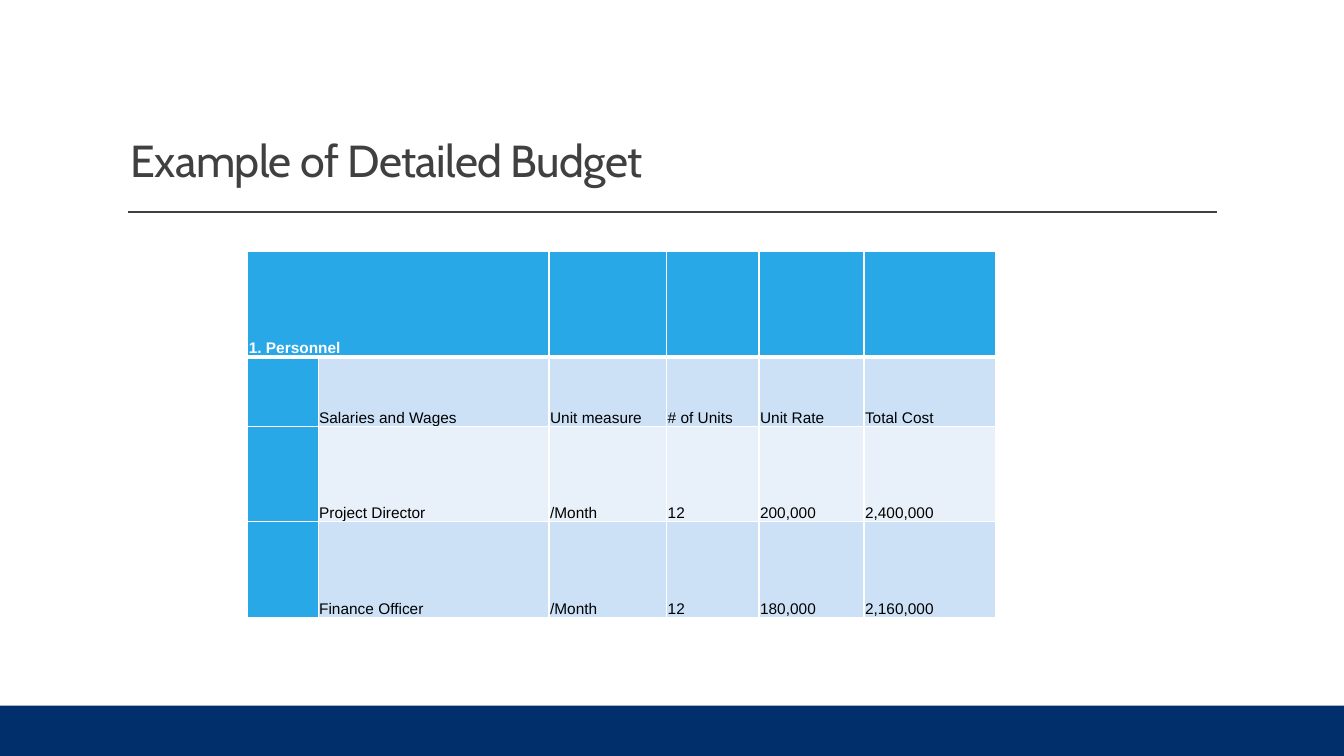
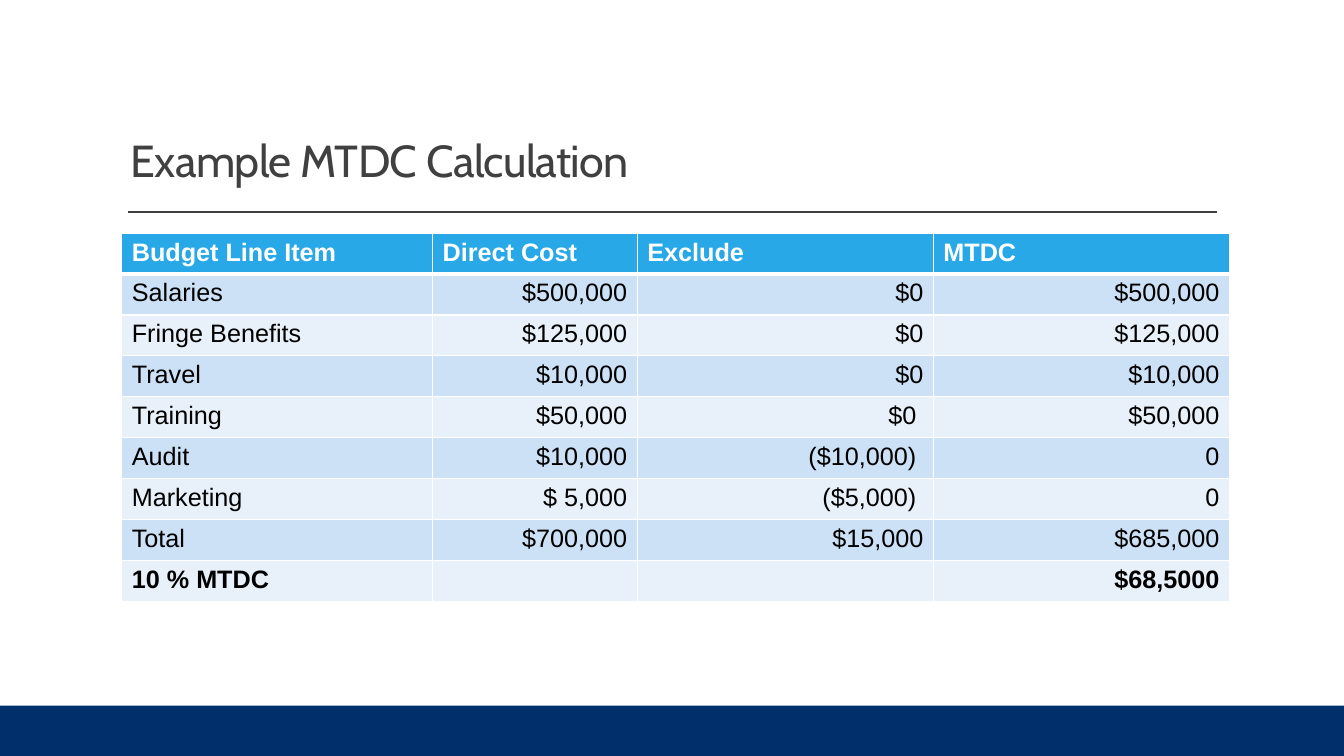
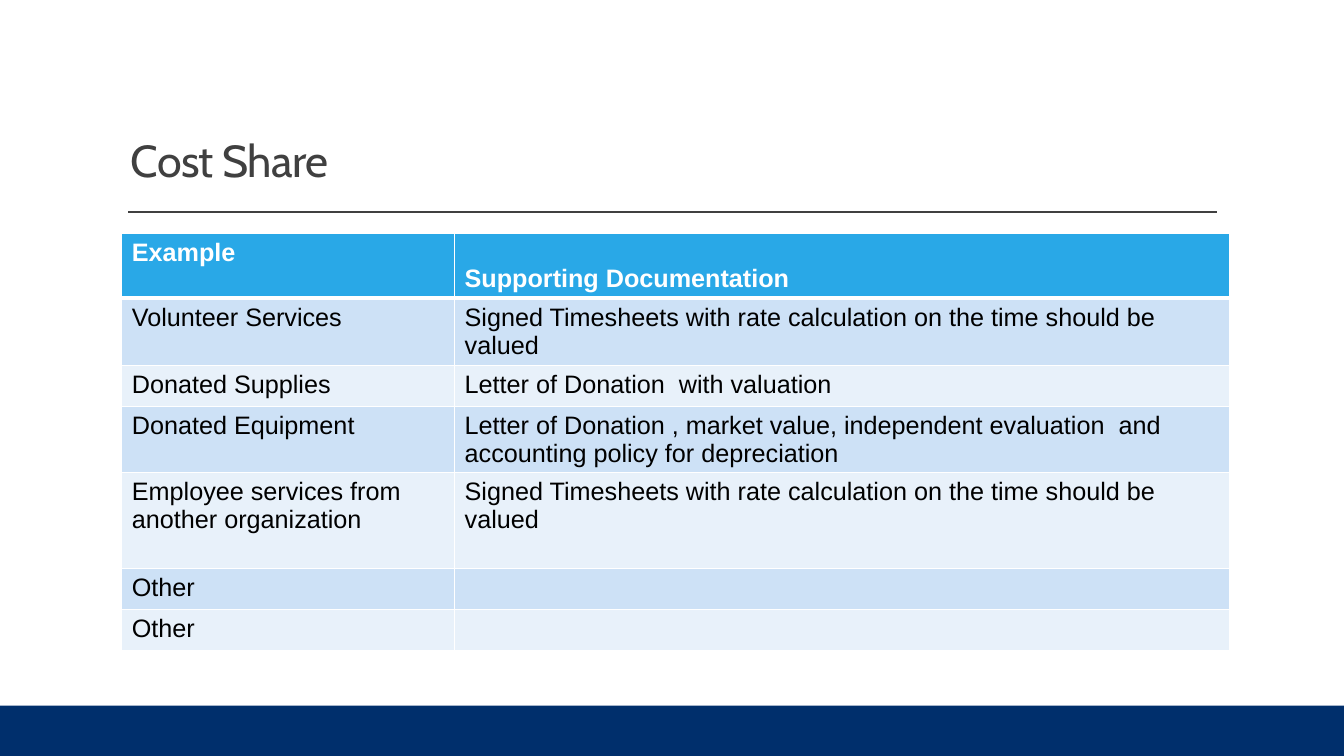
"""Builds three budget table slides on one shared master."""
from pptx import Presentation
from pptx.dml.color import RGBColor
from pptx.enum.shapes import MSO_CONNECTOR, MSO_SHAPE
from pptx.enum.text import MSO_ANCHOR, PP_ALIGN
from pptx.oxml import parse_xml
from pptx.oxml.ns import nsdecls, qn
from pptx.util import Pt

PX = 9525
INK = {
    "navy": "002F6C",
    "gray": "404040",
    "blue": "29A8E7",
    "dark": "CDE1F6",
    "pale": "E8F1FA",
    "white": "FFFFFF",
    "black": "000000",
}
NS = nsdecls("a")


def hue(name):
    return RGBColor.from_string(INK[name])


def edge(side, width):
    return parse_xml(
        f'<a:{side} {NS} w="{Pt(width)}"><a:solidFill>'
        f'<a:srgbClr val="{INK["white"]}"/></a:solidFill></a:{side}>'
    )


pages = [
    {
        "title": "Example of Detailed Budget",
        "at": (236, 239),
        "cols": [67, 220, 112, 88, 100, 125],
        "rows": [101, 66, 91, 91],
        "size": 11,
        "side": True,
        "cell": {
            "vertical_anchor": MSO_ANCHOR.BOTTOM,
            "margin_left": PX,
            "margin_top": PX,
            "margin_right": PX,
            "margin_bottom": 0,
        },
        "para": {"alignment": PP_ALIGN.JUSTIFY, "line_spacing": 1.07},
        "data": [
            ["1. Personnel", "", "", "", "", ""],
            ["", "Salaries and Wages", "Unit measure", "# of Units", "Unit Rate", "Total Cost"],
            ["", "Project Director", "/Month", "12", "200,000", "2,400,000"],
            ["", "Finance Officer", "/Month", "12", "180,000", "2,160,000"],
        ],
    },
    {
        "title": "Example MTDC Calculation",
        "at": (116, 222),
        "cols": [296, 195, 282, 282],
        "rows": [39] * 9,
        "size": 18,
        "right": True,
        "data": [
            ["Budget Line Item", "Direct Cost", "Exclude", "MTDC"],
            ["Salaries", "$500,000", "$0", "$500,000"],
            ["Fringe Benefits", "$125,000", "$0", "$125,000"],
            ["Travel", "$10,000", "$0", "$10,000"],
            ["Training", "$50,000", "$0 ", "$50,000"],
            ["Audit", "$10,000", "($10,000) ", "0"],
            ["Marketing", "$ 5,000", "($5,000) ", "0"],
            ["Total", "$700,000", "$15,000", "$685,000"],
            ["10 % MTDC", "", "", "$68,5000"],
        ],
        "bold": 8,
    },
    {
        "title": "Cost Share",
        "at": (116, 222),
        "cols": [317, 738],
        "rows": [62, 64, 39, 63, 91, 39, 39],
        "size": 18,
        "low": (0, 1),
        "data": [
            ["Example", "Supporting Documentation"],
            ["Volunteer Services", "Signed Timesheets with rate calculation on the time should be valued"],
            ["Donated Supplies", "Letter of Donation  with valuation"],
            [
                "Donated Equipment",
                "Letter of Donation , market value, independent evaluation  and accounting policy for depreciation",
            ],
            [
                "Employee services from another organization",
                "Signed Timesheets with rate calculation on the time should be valued",
            ],
            ["Other", ""],
            ["Other", ""],
        ],
    },
]

deck = Presentation()
deck.slide_width, deck.slide_height = 1280 * PX, 720 * PX
main = deck.slide_master
plan = deck.slide_layouts.get_by_name("Title Only")

style = main.element.find(f".//{qn('p:titleStyle')}/{qn('a:lvl1pPr')}")
style.set("algn", "l")
style.insert(0, parse_xml(f'<a:lnSpc {NS}><a:spcPct val="90000"/></a:lnSpc>'))
style.replace(
    style.find(qn("a:defRPr")),
    parse_xml(
        f'<a:defRPr {NS} sz="3200" spc="-50"><a:solidFill><a:srgbClr val="{INK["gray"]}"/>'
        '</a:solidFill><a:latin typeface="Cabin"/></a:defRPr>'
    ),
)
head = plan.placeholders[0]
box = {"left": 115, "top": 30, "width": 1056, "height": 153}
for key, value in box.items():
    setattr(head, key, value * PX)
head.text_frame.vertical_anchor = MSO_ANCHOR.BOTTOM

slides = [deck.slides.add_slide(plan) for page in pages]

draft = slides[0].shapes
band = draft.add_shape(MSO_SHAPE.RECTANGLE, 0, 672 * PX, 1280 * PX, 48 * PX)
band.shadow.inherit = False
band.fill.solid()
band.fill.fore_color.rgb = hue("navy")
band.line.fill.background()
rule = draft.add_connector(MSO_CONNECTOR.STRAIGHT, 122 * PX, 202 * PX, 1159 * PX, 202 * PX)
rule.line.color.rgb = hue("gray")
rule.line.width = Pt(1)
rule.element.find(qn("p:spPr")).append(parse_xml(f"<a:effectLst {NS}/>"))
for num, part in enumerate((band, rule)):
    part.element.find(f".//{qn('p:cNvPr')}").set("id", str(20 + num))
    main.shapes.element.insert(2 + num, part.element)

for slide, page in zip(slides, pages):
    slide.shapes.title.text = page["title"]
    cols, rows = page["cols"], page["rows"]
    area = [n * PX for n in (*page["at"], sum(cols), sum(rows))]
    table = slide.shapes.add_table(len(rows), len(cols), *area).table
    table.first_row = table.horz_banding = False
    for col, width in zip(table.columns, cols):
        col.width = width * PX
    for row, height in zip(table.rows, rows):
        row.height = height * PX
    for i, line in enumerate(page["data"]):
        for j, text in enumerate(line):
            cell = table.cell(i, j)
            top = i == 0
            blue = top or (page.get("side") and j == 0)
            cell.fill.solid()
            cell.fill.fore_color.rgb = hue("blue" if blue else "dark" if i % 2 else "pale")
            sides = {"lnL": 1, "lnR": 1, "lnT": 3 if i == 1 else 1, "lnB": 3 if top else 1}
            props = cell.fill.fore_color and cell._tc.get_or_add_tcPr()
            for k, (side, width) in enumerate(sides.items()):
                props.insert(k, edge(side, width))
            for key, value in page.get("cell", {}).items():
                setattr(cell, key, value)
            if page.get("low") == (i, j):
                cell.vertical_anchor = MSO_ANCHOR.BOTTOM
            if not text:
                continue
            cell.text = text
            para = cell.text_frame.paragraphs[0]
            for key, value in page.get("para", {}).items():
                setattr(para, key, value)
            if page.get("right") and i and j:
                para.alignment = PP_ALIGN.RIGHT
            font = para.runs[0].font
            look = {"name": "Arial", "size": Pt(page["size"]), "bold": top or i == page.get("bold")}
            for key, value in look.items():
                setattr(font, key, value)
            font.color.rgb = hue("white" if top else "black")
    if page.get("side"):
        table.cell(0, 0).merge(table.cell(0, 1))

deck.save("out.pptx")
